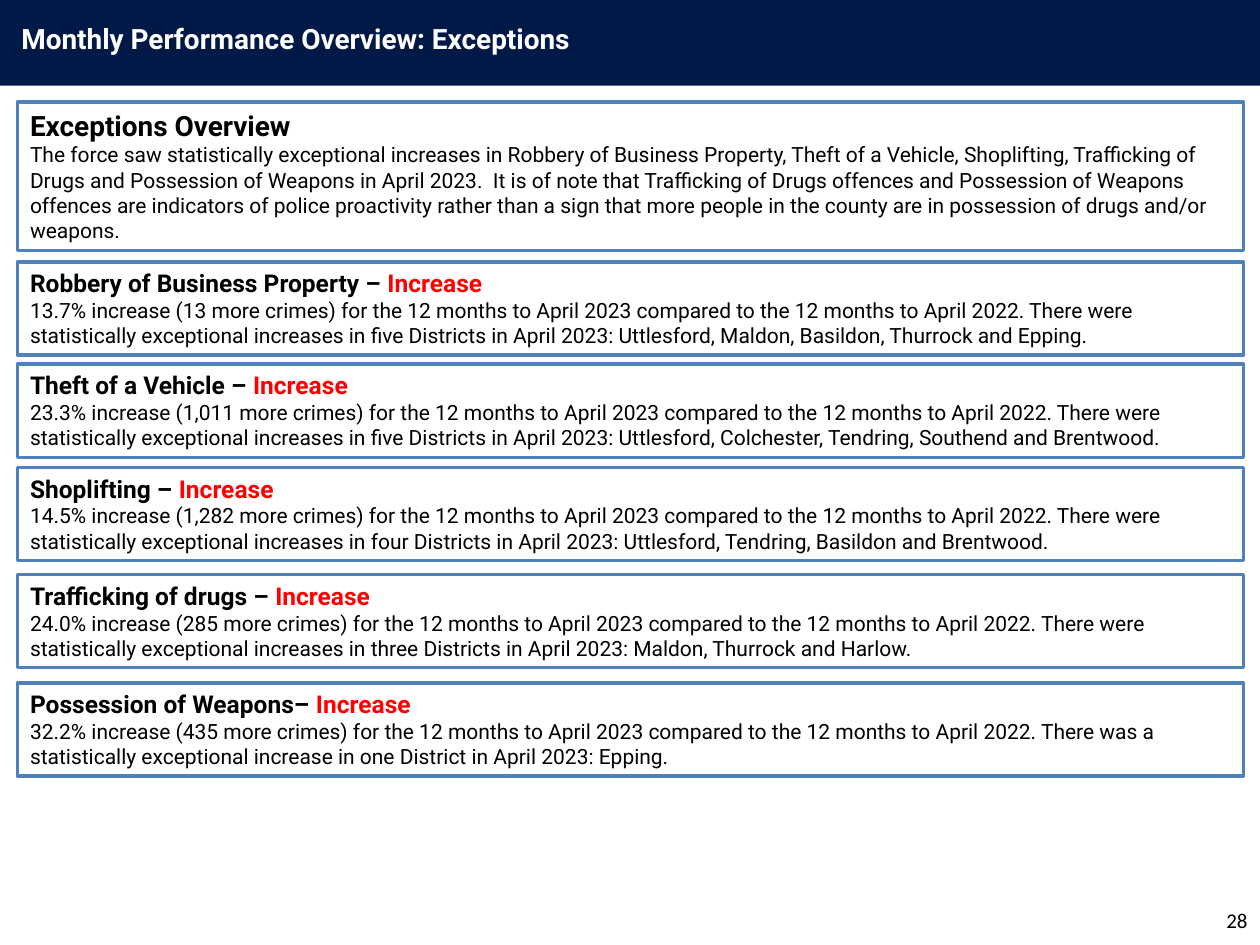
"""Builds the monthly performance exceptions slide."""
from pptx import Presentation, util as u
from pptx.dml.color import RGBColor
from pptx.enum import shapes, text

WIDTH, HEIGHT = 10, 7.5
MARGIN, PANEL_WIDTH = 0.14, 9.73
NAVY, BLUE, RED, BLACK, WHITE = "001947", "4F81BD", "FF0000", "000000", "FFFFFF"

TITLE = "Monthly Performance Overview: Exceptions"
PAGE_NUMBER = "28"
OVERVIEW = (
    "Exceptions Overview",
    "The force saw statistically exceptional increases in Robbery of Business Property, "
    "Theft of a Vehicle, Shoplifting, Trafficking of Drugs and Possession of Weapons in "
    "April 2023.  It is of note that Trafficking of Drugs offences and Possession of Weapons "
    "offences are indicators of police proactivity rather than a sign that more people in the "
    "county are in possession of drugs and/or weapons.",
)
PERIOD = "for the 12 months to April 2023 compared to the 12 months to April 2022."
MANY = "There were statistically exceptional increases in {} Districts in April 2023:"
ONE = "There was a statistically exceptional increase in one District in April 2023:"
EXCEPTIONS = [
    (2.08, "Robbery of Business Property – ", "13.7%", "13", MANY.format("five"),
     "Uttlesford, Maldon, Basildon, Thurrock and Epping"),
    (2.89, "Theft of a Vehicle – ", "23.3%", "1,011", MANY.format("five"),
     "Uttlesford, Colchester, Tendring, Southend and Brentwood"),
    (3.71, "Shoplifting – ", "14.5%", "1,282", MANY.format("four"),
     "Uttlesford, Tendring, Basildon and Brentwood"),
    (4.56, "Trafficking of drugs – ", "24.0%", "285", MANY.format("three"),
     "Maldon, Thurrock and Harlow"),
    (5.42, "Possession of Weapons– ", "32.2%", "435", ONE, "Epping"),
]


def color(value):
    return RGBColor.from_string(value)


def inches(*lengths):
    return [u.Inches(length) for length in lengths]


def style(para, size, bold=False, ink=BLACK, name="Roboto", align=text.PP_ALIGN.LEFT):
    para.alignment = align
    para.font.size, para.font.bold, para.font.name = u.Pt(size), bold, name
    para.font.color.rgb = color(ink)


def add_rectangle(page, place, fill, line=None):
    box = page.shapes.add_shape(shapes.MSO_SHAPE.RECTANGLE, *inches(*place))
    box.shadow.inherit = False
    box.fill.solid()
    box.fill.fore_color.rgb = color(fill)
    if line:
        box.line.color.rgb = color(line)
        box.line.width = u.Pt(2)
    else:
        box.line.fill.background()
    return box


def add_panel(page, top, height, heading, size, body, flag=""):
    box = add_rectangle(page, (MARGIN, top, PANEL_WIDTH, height), WHITE, BLUE)
    frame = box.text_frame
    frame.word_wrap = True
    frame.vertical_anchor = text.MSO_ANCHOR.TOP
    frame.auto_size = text.MSO_AUTO_SIZE.SHAPE_TO_FIT_TEXT
    para = frame.paragraphs[0]
    para.add_run().text = heading
    style(para, size, bold=True)
    if flag:
        span = para.add_run()
        span.text = flag
        span.font.color.rgb = color(RED)
    para = frame.add_paragraph()
    para.text = body
    style(para, 12)


def add_header(page):
    title = page.shapes.title
    title.left, title.top, title.width, title.height = inches(0.07, 0.12, 5.67, 0.37)
    frame = title.text_frame
    frame.text = TITLE
    frame.vertical_anchor = text.MSO_ANCHOR.TOP
    frame.auto_size = text.MSO_AUTO_SIZE.SHAPE_TO_FIT_TEXT
    style(frame.paragraphs[0], 16, bold=True, ink=WHITE)
    band = add_rectangle(page, (0, -0.07, WIDTH, 0.75), NAVY)
    title.element.addprevious(band.element)


def add_page_number(page):
    width, height = 2.33, 0.4
    place = inches(WIDTH - width, HEIGHT - height, width, height)
    frame = page.shapes.add_textbox(*place).text_frame
    frame.word_wrap = True
    frame.vertical_anchor = text.MSO_ANCHOR.MIDDLE
    frame.text = PAGE_NUMBER
    style(frame.paragraphs[0], 12, name="Calibri", align=text.PP_ALIGN.RIGHT)


def main():
    deck = Presentation()
    deck.slide_width, deck.slide_height = inches(WIDTH, HEIGHT)
    page = deck.slides.add_slide(deck.slide_layouts[5])
    add_header(page)
    add_page_number(page)
    heading, body = OVERVIEW
    add_panel(page, 0.81, 1.18, heading, 16, body)
    for top, heading, rate, crimes, finding, districts in EXCEPTIONS:
        body = f"{rate} increase ({crimes} more crimes) {PERIOD} {finding} {districts}."
        add_panel(page, top, 0.74, heading, 14, body, "Increase")
    deck.save("out.pptx")


if __name__ == "__main__":
    main()
